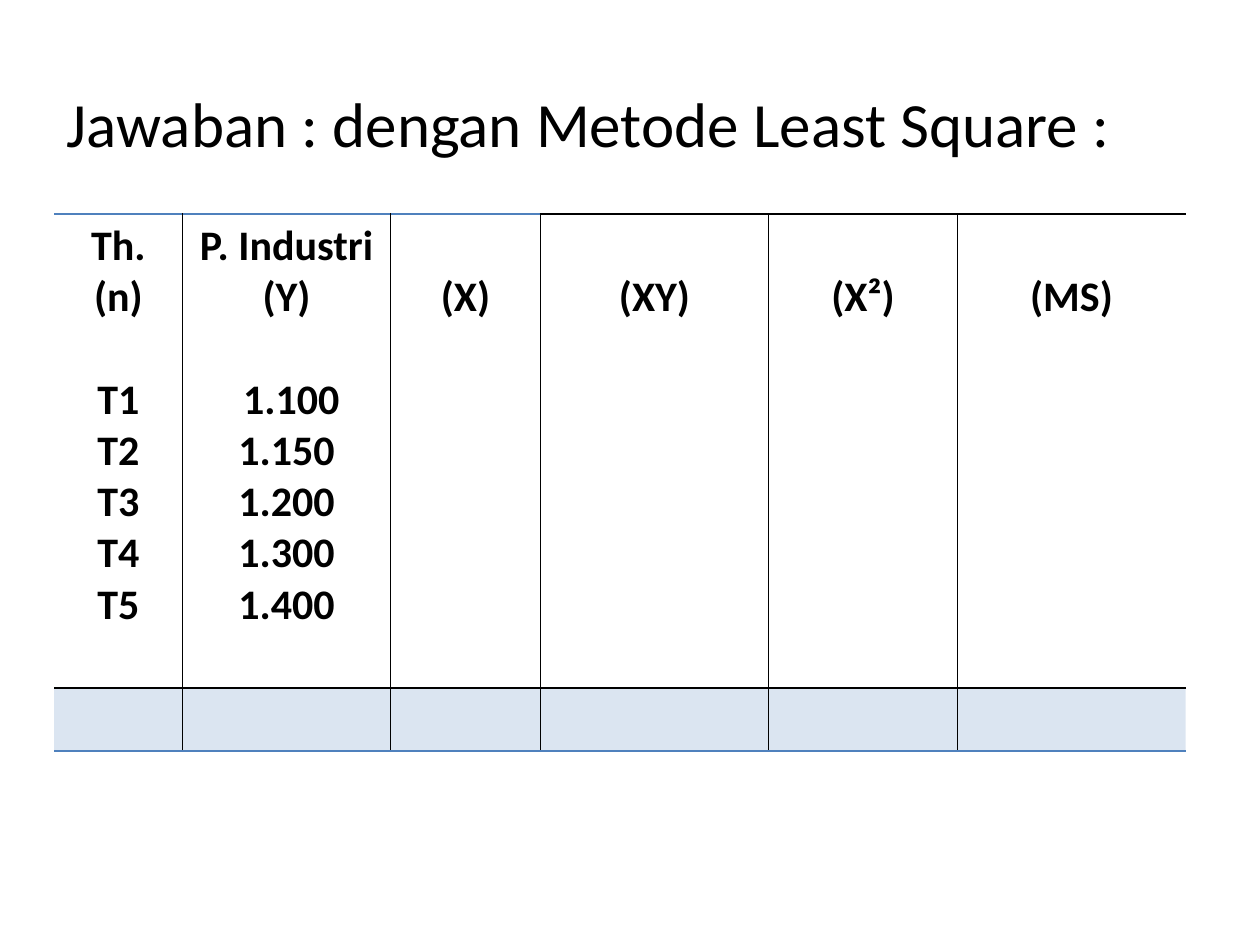
from dataclasses import dataclass

from lxml.etree import SubElement
from pptx import Presentation
from pptx.dml.color import RGBColor
from pptx.enum.text import MSO_ANCHOR, PP_ALIGN
from pptx.oxml.ns import qn
from pptx.util import Inches, Pt


@dataclass(frozen=True)
class Theme:
    font: str = "Calibri"
    ink: str = "000000"
    accent: str = "4F81BD"
    tint_percent: int = 20
    title_size: int = 36
    body_size: int = 24
    line_pitch: float = 29.3
    border_width: int = 1


THEME = Theme()
TITLE = "Jawaban : dengan Metode Least Square :"
# Each column: width in inches, heading lines, values
COLUMNS = [
    (1.02, ["Th.", "(n)"], ["T1", "T2", "T3", "T4", "T5"]),
    (1.65, ["P. Industri", "(Y)"], [" 1.100", "1.150", "1.200", "1.300", "1.400"]),
    (1.19, ["(X)"], []),
    (1.81, ["(XY)"], []),
    (1.5, ["(X²)"], []),
    (1.81, ["(MS)"], []),
]
ROW_HEIGHTS = [3.76, 0.5]
HEADING_LINES = 2
ACCENT_TOP_COLUMNS = 3
LEFT, TABLE_TOP = 0.43, 1.7
TITLE_TOP, TITLE_WIDTH, TITLE_HEIGHT = 0.44, 9.13, 1.06
CELL_PADDING = 0.05


def add_run(paragraph, text, size, bold=False):
    run = paragraph.add_run()
    run.text = text
    run.font.name = THEME.font
    run.font.size = Pt(size)
    run.font.bold = bold
    run.font.color.rgb = RGBColor.from_string(THEME.ink)


def set_borders(cell, left, right, top, bottom):
    """Draw each side in the given colour, or leave it open when None."""
    properties = cell._tc.get_or_add_tcPr()
    sides = {"a:lnL": left, "a:lnR": right, "a:lnT": top, "a:lnB": bottom}
    for tag, color in sides.items():
        line = SubElement(properties, qn(tag), w=str(Pt(THEME.border_width)))
        if color is None:
            SubElement(line, qn("a:noFill"))
        else:
            fill = SubElement(line, qn("a:solidFill"))
            SubElement(fill, qn("a:srgbClr"), val=color)


def fill_with_tint(cell):
    cell.fill.solid()
    cell.fill.fore_color.rgb = RGBColor.from_string(THEME.accent)
    color = cell._tc.tcPr.find(qn("a:solidFill")).find(qn("a:srgbClr"))
    SubElement(color, qn("a:alpha"), val=str(THEME.tint_percent * 1000))


def write_column(cell, headings, values):
    """Write bottom-aligned headings, then the values one line below them."""
    missing_lines = HEADING_LINES - len(headings)
    cell.margin_top = Inches(CELL_PADDING) + Pt(missing_lines * THEME.line_pitch)
    frame = cell.text_frame
    for index, text in enumerate(headings + values):
        paragraph = frame.add_paragraph() if index else frame.paragraphs[0]
        paragraph.alignment = PP_ALIGN.CENTER
        if index == len(headings):
            paragraph.space_before = Pt(THEME.line_pitch)
        add_run(paragraph, text, THEME.body_size, bold=True)


def add_title(slide):
    title = slide.shapes.title
    title.left, title.top = Inches(LEFT), Inches(TITLE_TOP)
    title.width, title.height = Inches(TITLE_WIDTH), Inches(TITLE_HEIGHT)
    title.text_frame.vertical_anchor = MSO_ANCHOR.MIDDLE
    paragraph = title.text_frame.paragraphs[0]
    paragraph.alignment = PP_ALIGN.LEFT
    add_run(paragraph, TITLE, THEME.title_size)


def add_least_square_table(slide):
    table_width = sum(width for width, _, _ in COLUMNS)
    table = slide.shapes.add_table(
        len(ROW_HEIGHTS), len(COLUMNS), Inches(LEFT), Inches(TABLE_TOP),
        Inches(table_width), Inches(sum(ROW_HEIGHTS))).table
    table.first_row = table.horz_banding = False
    for row, height in zip(table.rows, ROW_HEIGHTS):
        row.height = Inches(height)
    for index, (width, headings, values) in enumerate(COLUMNS):
        table.columns[index].width = Inches(width)
        data_cell, total_cell = table.cell(0, index), table.cell(1, index)
        left = THEME.ink if index else None
        right = THEME.ink if index < len(COLUMNS) - 1 else None
        top = THEME.accent if index < ACCENT_TOP_COLUMNS else THEME.ink
        set_borders(data_cell, left, right, top, THEME.ink)
        set_borders(total_cell, left, right, THEME.ink, THEME.accent)
        data_cell.fill.background()
        fill_with_tint(total_cell)
        write_column(data_cell, headings, values)


def main():
    presentation = Presentation()
    presentation.slide_width, presentation.slide_height = Inches(10), Inches(7.5)
    slide = presentation.slides.add_slide(presentation.slide_layouts[5])
    add_title(slide)
    add_least_square_table(slide)
    presentation.save("out.pptx")


if __name__ == "__main__":
    main()
